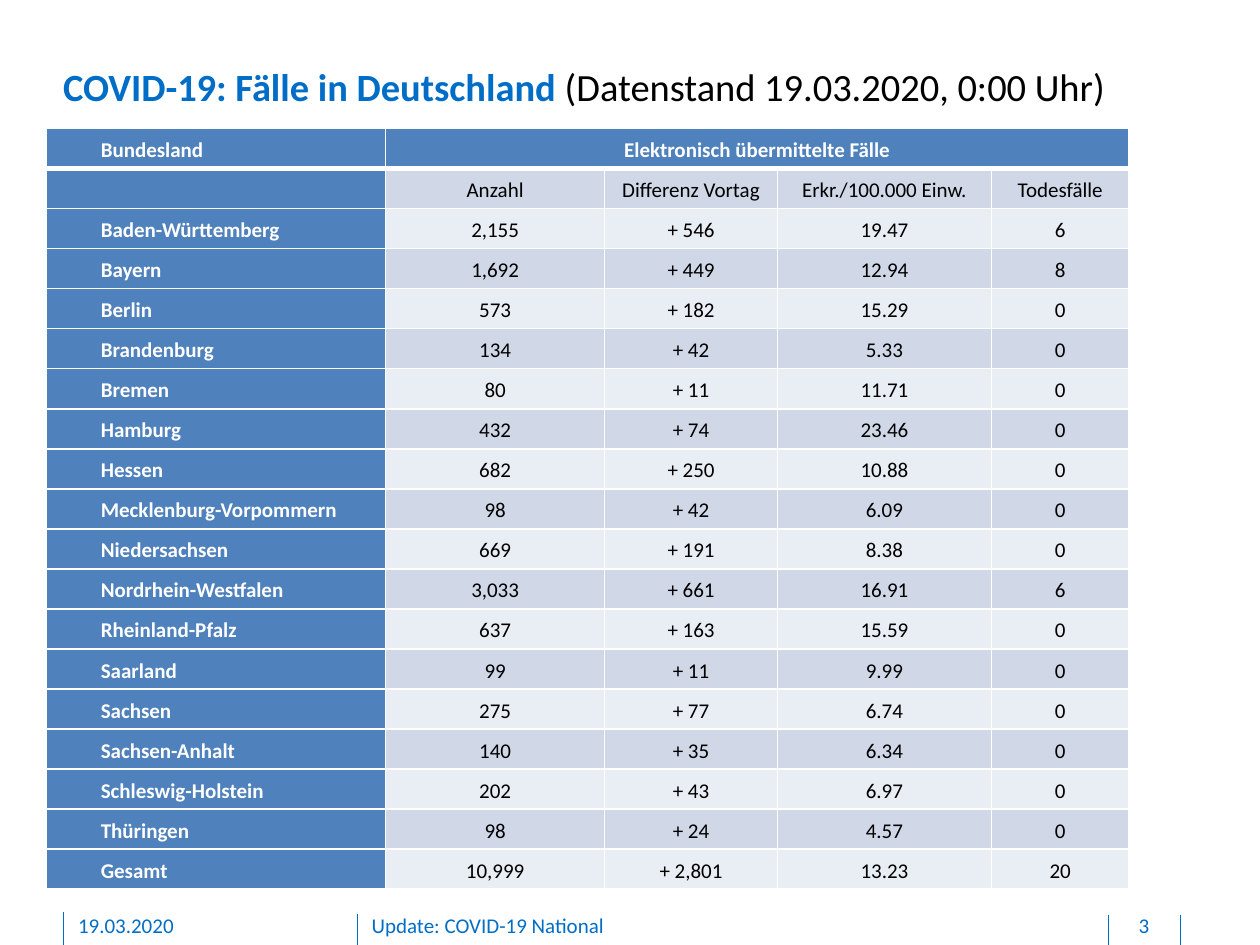
"""Build the slide with COVID-19 cases per German federal state."""
from lxml.etree import SubElement
from pptx import Presentation
from pptx.dml.color import RGBColor
from pptx.enum.shapes import MSO_CONNECTOR as Connector
from pptx.enum.text import MSO_ANCHOR as Anchor, PP_ALIGN as Align
from pptx.oxml.ns import qn
from pptx.util import Inches, Pt

ACCENT = RGBColor(0x00, 0x6E, 0xC7)
HEADER = RGBColor(0x4F, 0x81, 0xBD)
BAND_DARK = RGBColor(0xD0, 0xD8, 0xE8)
BAND_LIGHT = RGBColor(0xE9, 0xED, 0xF4)
BLACK = RGBColor(0x00, 0x00, 0x00)
WHITE = RGBColor(0xFF, 0xFF, 0xFF)

COLUMN_WIDTHS = [2.69, 1.74, 1.37, 1.7, 1.09]
ROWS = [
    ("Bundesland", "Elektronisch übermittelte Fälle", "", "", ""),
    ("", "Anzahl", "Differenz Vortag", "Erkr./100.000 Einw.", "Todesfälle"),
    ("Baden-Württemberg", "2,155", "+ 546", "19.47", "6"),
    ("Bayern", "1,692", "+ 449", "12.94", "8"),
    ("Berlin", "573", "+ 182", "15.29", "0"),
    ("Brandenburg", "134", "+ 42", "5.33", "0"),
    ("Bremen", "80", "+ 11", "11.71", "0"),
    ("Hamburg", "432", "+ 74", "23.46", "0"),
    ("Hessen", "682", "+ 250", "10.88", "0"),
    ("Mecklenburg-Vorpommern", "98", "+ 42", "6.09", "0"),
    ("Niedersachsen", "669", "+ 191", "8.38", "0"),
    ("Nordrhein-Westfalen", "3,033", "+ 661", "16.91", "6"),
    ("Rheinland-Pfalz", "637", "+ 163", "15.59", "0"),
    ("Saarland", "99", "+ 11", "9.99", "0"),
    ("Sachsen", "275", "+ 77", "6.74", "0"),
    ("Sachsen-Anhalt", "140", "+ 35", "6.34", "0"),
    ("Schleswig-Holstein", "202", "+ 43", "6.97", "0"),
    ("Thüringen", "98", "+ 24", "4.57", "0"),
    ("Gesamt", "10,999", "+ 2,801", "13.23", "20"),
]


def add_run(paragraph, text, size, color, bold=False):
    run = paragraph.add_run()
    run.text = text
    run.font.name = "Calibri"
    run.font.size = Pt(size)
    run.font.color.rgb = color
    run.font.bold = bold


def add_text(slide, left, top, width, height, bottom_inset, align, runs):
    frame = slide.shapes.add_textbox(
        Inches(left), Inches(top), Inches(width), Inches(height)).text_frame
    frame.word_wrap = True
    frame.margin_left = frame.margin_right = frame.margin_top = 0
    frame.margin_bottom = Inches(bottom_inset)
    paragraph = frame.paragraphs[0]
    paragraph.alignment = align
    for run in runs:
        add_run(paragraph, *run)


presentation = Presentation()
presentation.slide_width = Inches(10)
presentation.slide_height = Inches(7.5)
slide = presentation.slides.add_slide(presentation.slide_layouts[6])

for x, top in [(2.84, 7.25), (0.5, 7.24), (9.37, 7.26), (8.8, 7.26)]:
    divider = slide.shapes.add_connector(
        Connector.STRAIGHT, Inches(x), Inches(top), Inches(x), Inches(7.5))
    divider.line.color.rgb = ACCENT
    divider.line.width = Pt(0.5)
    SubElement(divider._element.spPr, qn("a:effectLst"))

add_text(slide, 0.5, 0.5, 8.85, 0.37, 0, Align.LEFT, [
    ("COVID-19: Fälle in Deutschland ", 22, ACCENT, True),
    ("(Datenstand 19.03.2020, 0:00 Uhr)", 22, BLACK),
])

table = slide.shapes.add_table(
    len(ROWS), len(COLUMN_WIDTHS), Inches(0.37), Inches(1.02),
    Inches(sum(COLUMN_WIDTHS)), Inches(6.04)).table
for column, width in zip(table.columns, COLUMN_WIDTHS):
    column.width = Inches(width)
table.cell(0, 1).merge(table.cell(0, 4))

for row_index, row in enumerate(ROWS):
    for column_index, text in enumerate(row):
        cell = table.cell(row_index, column_index)
        is_header = row_index == 0 or column_index == 0
        cell.margin_left = cell.margin_right = Inches(0.04)
        cell.margin_top = cell.margin_bottom = 0
        cell.vertical_anchor = Anchor.MIDDLE

        properties = cell._tc.get_or_add_tcPr()
        for side in ("lnL", "lnR", "lnT", "lnB"):
            thick = (row_index, side) in [(0, "lnB"), (1, "lnT")]
            border = SubElement(properties, qn(f"a:{side}"), w=str(Pt(3 if thick else 1)))
            fill = SubElement(border, qn("a:solidFill"))
            SubElement(fill, qn("a:srgbClr"), val=str(WHITE))

        cell.fill.solid()
        band = BAND_DARK if row_index % 2 else BAND_LIGHT
        cell.fill.fore_color.rgb = HEADER if is_header else band

        if text:
            paragraph = cell.text_frame.paragraphs[0]
            paragraph.line_spacing = 1.15
            if column_index == 0:
                paragraph._p.get_or_add_pPr().set("indent", str(Inches(0.39)))
            else:
                paragraph.alignment = Align.CENTER
            add_run(paragraph, text, 12, WHITE if is_header else BLACK, is_header)

for left, width, align, text in [
    (2.95, 5.67, Align.LEFT, "Update: COVID-19 National"),
    (8.81, 0.54, Align.CENTER, "3"),
    (0.62, 2.03, Align.LEFT, "19.03.2020"),
]:
    add_text(slide, left, 7.24, width, 0.21, 0.05, align, [(text, 12, ACCENT)])

presentation.save("out.pptx")
